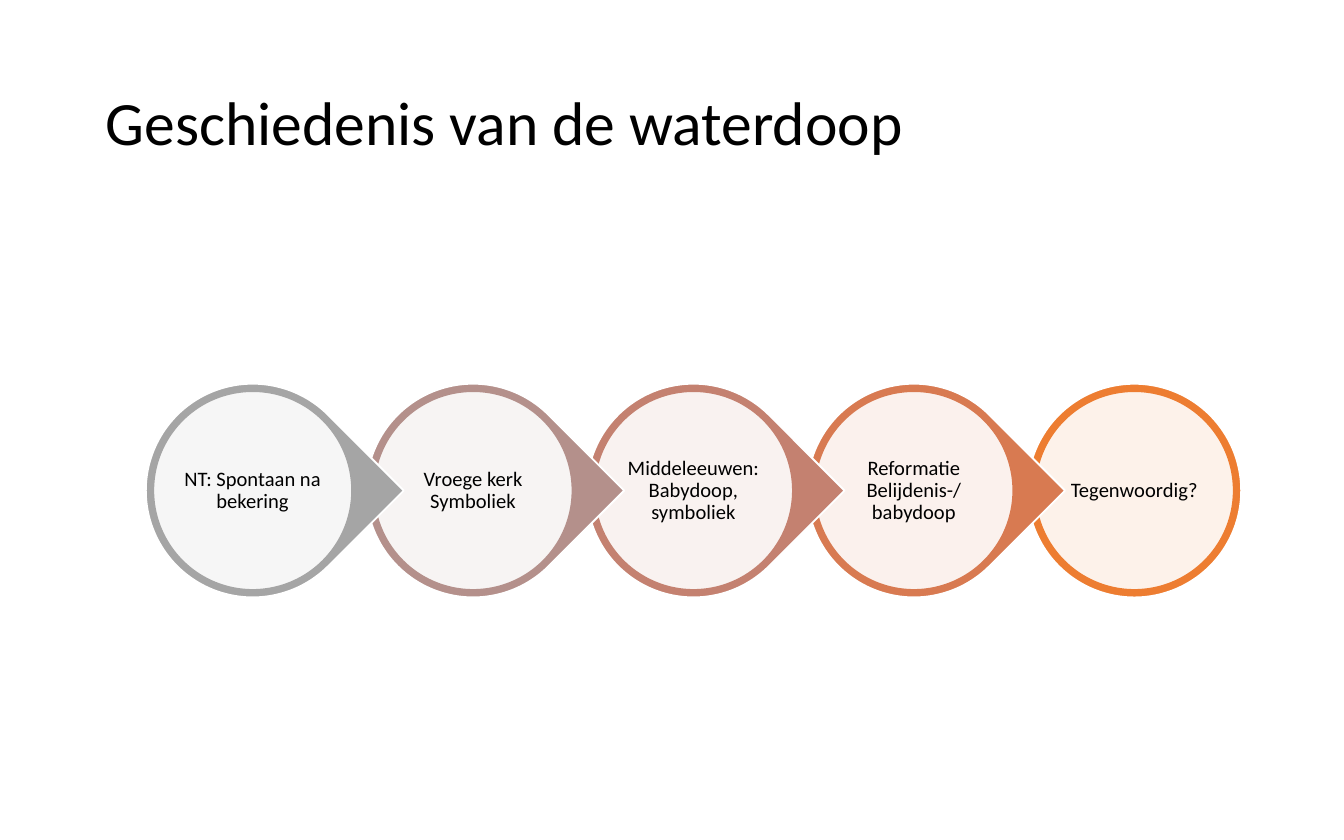
from lxml import etree
from pptx import Presentation
from pptx.dml.color import RGBColor
from pptx.enum import shapes, text
from pptx.oxml.ns import qn
from pptx.util import Inches, Pt

BLACK = RGBColor(0x00, 0x00, 0x00)
WHITE = RGBColor(0xFF, 0xFF, 0xFF)
GREY = RGBColor(0xA5, 0xA5, 0xA5)
TAUPE = RGBColor(0xB4, 0x90, 0x8B)
ROSE = RGBColor(0xC4, 0x81, 0x70)
TERRACOTTA = RGBColor(0xD8, 0x7A, 0x51)
ORANGE = RGBColor(0xED, 0x7D, 0x31)

PERIODS = [
    ("NT: Spontaan na bekering", GREY),
    ("Vroege kerk\vSymboliek", TAUPE),
    ("Middeleeuwen: Babydoop, symboliek", ROSE),
    ("Reformatie\vBelijdenis-/babydoop", TERRACOTTA),
    ("Tegenwoordig?", ORANGE),
]
FIRST_CENTER, CENTER_Y, PITCH = 1.88, 3.65, 1.64
OUTER, INNER, LABEL = 1.59, 1.48, 1.06

presentation = Presentation()
presentation.slide_width = Inches(10)
presentation.slide_height = Inches(6.25)
slide = presentation.slides.add_slide(presentation.slide_layouts[6])


def add_disc(preset, center_x, size, fill, line):
    """Add a shape of equal width and height around a point on the row."""
    shape = slide.shapes.add_shape(
        preset, Inches(center_x - size / 2), Inches(CENTER_Y - size / 2),
        Inches(size), Inches(size))
    shape.shadow.inherit = False
    shape.fill.solid()
    shape.fill.fore_color.rgb = fill
    shape.line.color.rgb = line
    shape.line.width = Pt(1)
    return shape


def add_text(left, top, width, height, wording, size):
    box = slide.shapes.add_textbox(
        Inches(left), Inches(top), Inches(width), Inches(height))
    frame = box.text_frame
    frame.word_wrap = True
    frame.vertical_anchor = text.MSO_ANCHOR.MIDDLE
    frame.text = wording
    paragraph = frame.paragraphs[0]
    paragraph.line_spacing = 0.9
    for run in paragraph.runs:
        run.font.name = "Calibri"
        run.font.size = Pt(size)
        run.font.color.rgb = BLACK
    return frame


add_text(0.69, 0.33, 8.62, 1.21, "Geschiedenis van de waterdoop", 33)

# Each teardrop points over the next period, so the row is stacked from the right.
for index, (wording, color) in reversed(list(enumerate(PERIODS))):
    center_x = FIRST_CENTER + index * PITCH
    if index == len(PERIODS) - 1:
        add_disc(shapes.MSO_SHAPE.OVAL, center_x, OUTER, color, WHITE)
    else:
        teardrop = add_disc(shapes.MSO_SHAPE.TEAR, center_x, OUTER, color, WHITE)
        teardrop.adjustments[0] = 1
        teardrop.rotation = 45

    disc = add_disc(shapes.MSO_SHAPE.OVAL, center_x, INNER, WHITE, color)
    fill_color = disc.fill._xPr.find(qn("a:solidFill"))[0]
    etree.SubElement(fill_color, qn("a:alpha"), val="90000")

    label = add_text(center_x - LABEL / 2, CENTER_Y - LABEL / 2,
                     LABEL, LABEL, wording, 11)
    label.margin_left = label.margin_right = Inches(0.01)
    label.margin_top = label.margin_bottom = Inches(0.02)
    label.paragraphs[0].alignment = text.PP_ALIGN.CENTER

presentation.save("out.pptx")
